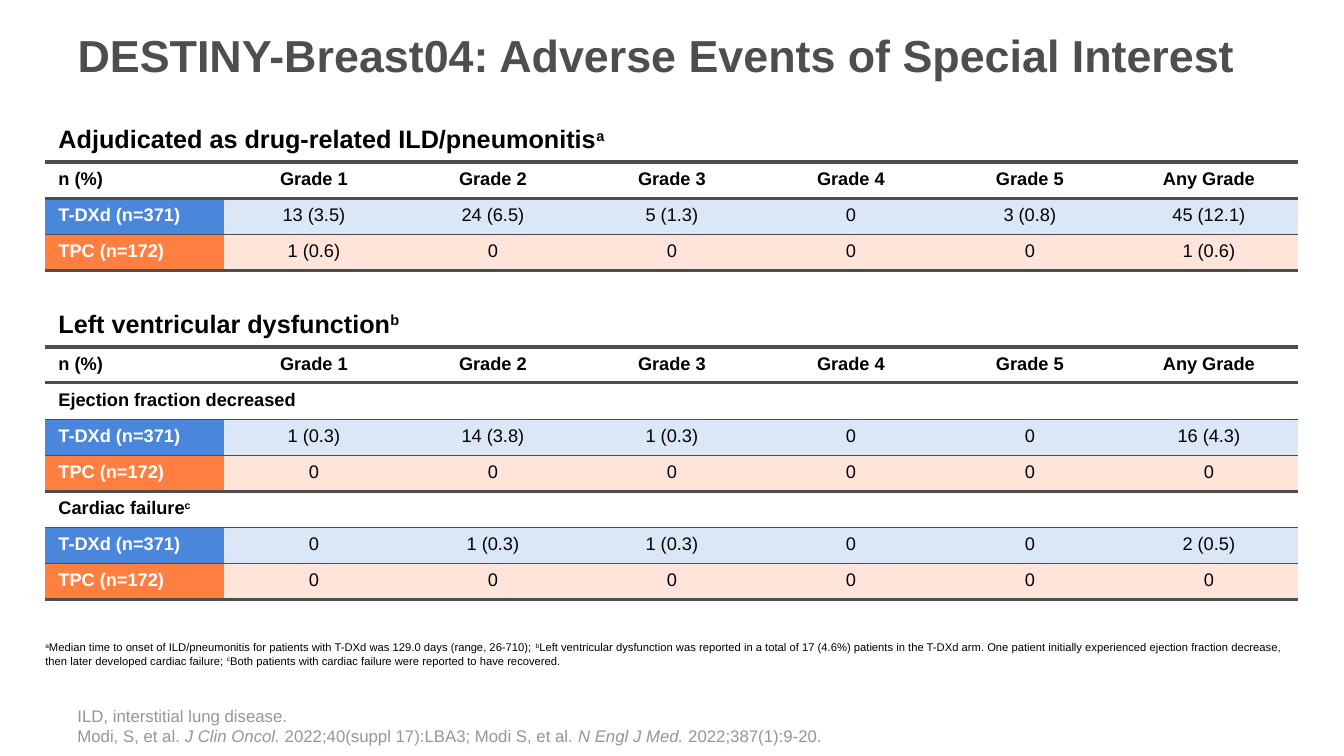
import pptx
import pptx.util
import pptx.dml.color
import pptx.enum.text
import pptx.oxml
import pptx.oxml.ns

COLORS = {
    "text": "000000",
    "white": "FFFFFF",
    "title": "4D4E4D",
    "rule": "4D4D4D",
    "source": "969696",
    "tdxd": "4A86D9",
    "tdxd_light": "DBE7F7",
    "tpc": "FF7F40",
    "tpc_light": "FFE5D9",
}
ALIGN = pptx.enum.text.PP_ALIGN
ANCHOR = pptx.enum.text.MSO_ANCHOR
GRADES = ["Grade 1", "Grade 2", "Grade 3", "Grade 4", "Grade 5", "Any Grade"]
SUPER = {"baseline": 30000}
ITALIC = {"italic": True}


class Deck:
    """Slide builder on a grid of 160 columns by 90 rows."""

    def __init__(self, width, height):
        self.presentation = pptx.Presentation()
        self.presentation.slide_width = pptx.util.Inches(width)
        self.presentation.slide_height = pptx.util.Inches(height)
        self.slide = self.presentation.slides.add_slide(self.presentation.slide_layouts[5])
        self.font = "Arial"

    def across(self, columns):
        return round(self.presentation.slide_width * columns / 160)

    def down(self, rows):
        return round(self.presentation.slide_height * rows / 90)

    def box(self, left, top, width, height):
        return self.across(left), self.down(top), self.across(width), self.down(height)

    def add_words(self, paragraph, pieces, color, align=ALIGN.LEFT, **style):
        paragraph.alignment = align
        for words, extra in pieces:
            run = paragraph.add_run()
            run.text = words
            look = {"name": self.font, **style, **extra}
            baseline = look.pop("baseline", 0)
            look["size"] = pptx.util.Pt(look["size"])
            for attribute, value in look.items():
                setattr(run.font, attribute, value)
            run.font.color.rgb = pptx.dml.color.RGBColor.from_string(COLORS[color])
            if baseline:
                run.font._element.set("baseline", str(baseline))

    def fill_frame(self, frame, paragraphs, settings, **style):
        settings = {"word_wrap": True, "auto_size": pptx.enum.text.MSO_AUTO_SIZE.NONE, **settings}
        for attribute, value in settings.items():
            setattr(frame, attribute, value)
        for index, pieces in enumerate(paragraphs):
            paragraph = frame.add_paragraph() if index else frame.paragraphs[0]
            self.add_words(paragraph, pieces, **style)

    def title(self, words, *place):
        heading = self.slide.shapes.title
        heading.left, heading.top, heading.width, heading.height = self.box(*place)
        self.fill_frame(heading.text_frame, [[(words, {})]], {"vertical_anchor": ANCHOR.TOP},
                        color="title", size=32, bold=True)

    def note(self, paragraphs, place, settings, **style):
        frame = self.slide.shapes.add_textbox(*self.box(*place)).text_frame
        self.fill_frame(frame, paragraphs, settings, **style)

    def rule_cell(self, cell, above, below):
        properties = cell._tc.get_or_add_tcPr()
        for index, (side, points) in enumerate([("L", 0), ("R", 0), ("T", above), ("B", below)]):
            paint = (f'<a:solidFill><a:srgbClr val="{COLORS["rule"]}"/></a:solidFill>'
                     if points else "<a:noFill/>")
            line = f'<a:ln{side} {pptx.oxml.ns.nsdecls("a")} w="{int(points * 12700)}">{paint}</a:ln{side}>'
            properties.insert(index, pptx.oxml.parse_xml(line))

    def cell(self, cell, pieces, fill, above, below, **style):
        margins = {"margin_left": 0.13, "margin_right": 0.13, "margin_top": 0.07, "margin_bottom": 0.07}
        for attribute, value in margins.items():
            setattr(cell, attribute, pptx.util.Inches(value))
        if fill:
            cell.fill.solid()
            cell.fill.fore_color.rgb = pptx.dml.color.RGBColor.from_string(COLORS[fill])
        else:
            cell.fill.background()
        self.rule_cell(cell, above, below)
        self.add_words(cell.text_frame.paragraphs[0], pieces, **style)

    def events_table(self, top, entries):
        title_height, row_height, width = 5.16, 4.3, 149.16
        height = title_height + row_height * (len(entries) - 1)
        table = self.slide.shapes.add_table(
            len(entries), 7, *self.box(5.4, top, width, height)).table
        for attribute in ("first_row", "horz_banding"):
            setattr(table, attribute, False)
        for column in table.columns:
            column.width = self.across(width / 7)
        below = 0
        for index, (kind, label, values) in enumerate(entries):
            table.rows[index].height = self.down(row_height if index else title_height)
            above, below = below, {"title": 3, "head": 2.25, "tpc": 2.25}.get(kind, 0.5)
            arm = kind in ("tdxd", "tpc")
            if not values:
                table.cell(index, 0).merge(table.cell(index, 6))
            self.cell(table.cell(index, 0), label, kind if arm else None, above, below,
                      color="white" if arm else "text", bold=True,
                      size=18 if kind == "title" else 13)
            for column in range(1, 7):
                words = [(values[column - 1], {})] if values else []
                self.cell(table.cell(index, column), words, kind + "_light" if arm else None,
                          above, below, color="text", align=ALIGN.CENTER, bold=not arm, size=13)


def heading(kind, words, mark=""):
    return kind, [(words, {})] + ([(mark, SUPER)] if mark else []), []


def arms(tdxd, tpc):
    return [("tdxd", [("T-DXd (n=371)", {})], tdxd), ("tpc", [("TPC (n=172)", {})], tpc)]


def main():
    deck = Deck(13.33, 7.5)
    grade_head = ("head", [("n (%)", {})], GRADES)
    no_events = ["0"] * 6

    deck.title("DESTINY-Breast04: Adverse Events of Special Interest", 8.04, 2.64, 141, 15.6)
    deck.events_table(14.16, [
        heading("title", "Adjudicated as drug-related ILD/pneumonitis", "a"),
        grade_head,
        *arms(["13 (3.5)", "24 (6.5)", "5 (1.3)", "0", "3 (0.8)", "45 (12.1)"],
              ["1 (0.6)", "0", "0", "0", "0", "1 (0.6)"]),
    ])
    deck.events_table(36.12, [
        heading("title", "Left ventricular dysfunction", "b"),
        grade_head,
        heading("section", "Ejection fraction decreased"),
        *arms(["1 (0.3)", "14 (3.8)", "1 (0.3)", "0", "0", "16 (4.3)"], no_events),
        heading("section", "Cardiac failure", "c"),
        *arms(["0", "1 (0.3)", "1 (0.3)", "0", "0", "2 (0.5)"], no_events),
    ])

    footnotes = [
        ("a", "Median time to onset of ILD/pneumonitis for patients with T-DXd was 129.0 days "
              "(range, 26-710); "),
        ("b", "Left ventricular dysfunction was reported in a total of 17 (4.6%) patients in the "
              "T-DXd arm. One patient initially experienced ejection fraction decrease, then later "
              "developed cardiac failure; "),
        ("c", "Both patients with cardiac failure were reported to have recovered."),
    ]
    footnote_pieces = [piece for mark, words in footnotes for piece in ((mark, SUPER), (words, {}))]
    tight = {"vertical_anchor": ANCHOR.BOTTOM, "margin_left": 0, "margin_right": 0,
             "margin_top": pptx.util.Inches(0.02), "margin_bottom": pptx.util.Inches(0.02)}
    deck.note([footnote_pieces], (5.4, 74.88, 148.08, 4.8), tight, color="text", size=8)

    sources = [
        [("ILD, interstitial lung disease.", {})],
        [("Modi, S, et al. ", {}), ("J Clin Oncol. ", ITALIC),
         ("2022;40(suppl 17):LBA3; Modi S, et al. ", {}), ("N Engl J Med. ", ITALIC),
         ("2022;387(1):9-20.", {})],
    ]
    deck.note(sources, (8.04, 83.4, 141, 5.76), {"vertical_anchor": ANCHOR.TOP},
              color="source", size=12)
    deck.presentation.save("out.pptx")


if __name__ == "__main__":
    main()
